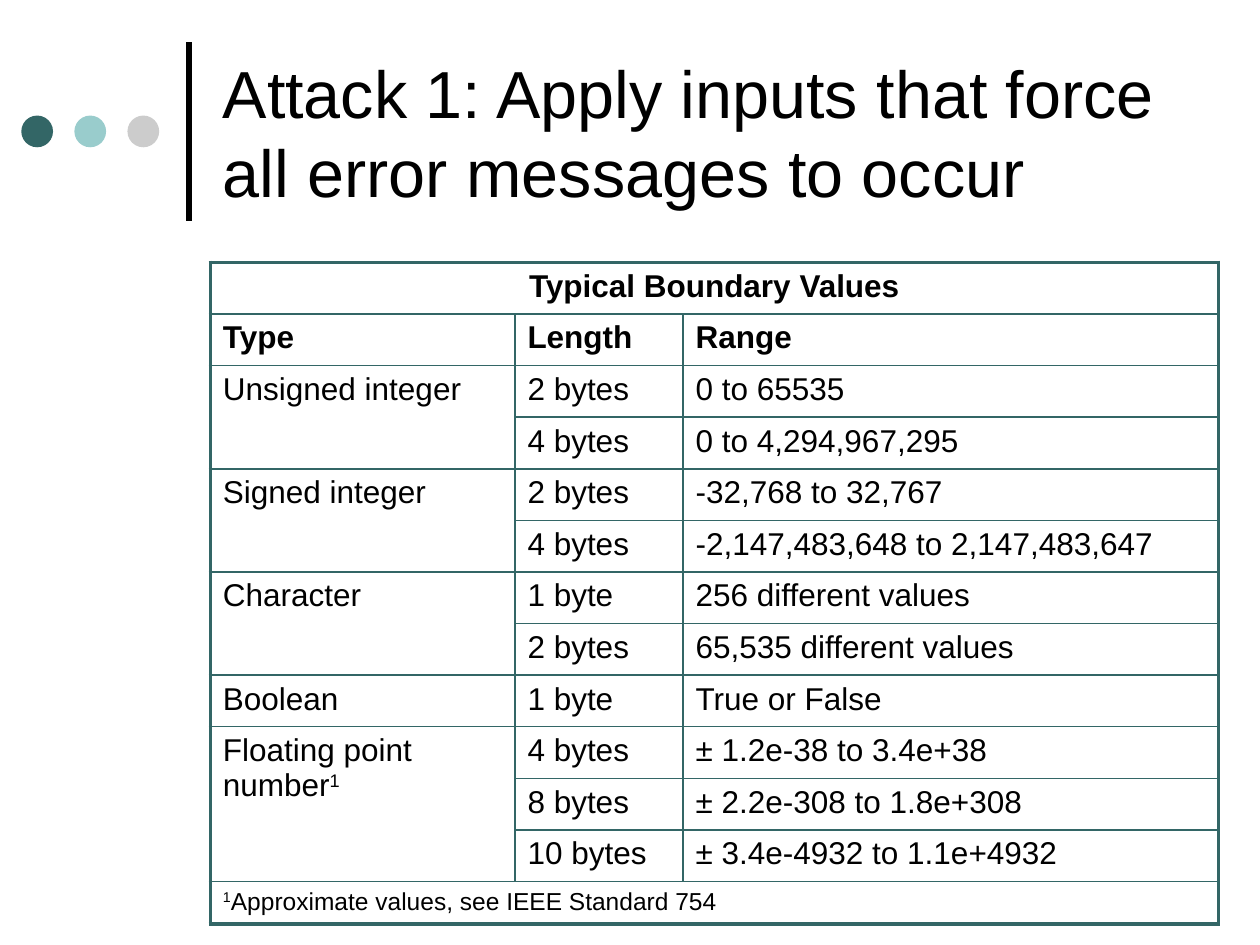
from lxml import etree
from pptx import Presentation
from pptx import util as u
from pptx.dml.color import RGBColor
from pptx.enum import shapes, text
from pptx.oxml.ns import qn

INK, TEAL, AQUA, GREY = "000000", "336666", "99CCCC", "CCCCCC"
ROWS = [
    ("Typical Boundary Values", "", ""),
    ("Type", "Length", "Range"),
    ("Unsigned integer", "2 bytes", "0 to 65535"),
    ("", "4 bytes", "0 to 4,294,967,295"),
    ("Signed integer", "2 bytes", "-32,768 to 32,767"),
    ("", "4 bytes", "-2,147,483,648 to 2,147,483,647"),
    ("Character", "1 byte", "256 different values"),
    ("", "2 bytes", "65,535 different values"),
    ("Boolean", "1 byte", "True or False"),
    ("Floating point number^1", "4 bytes", "± 1.2e-38 to 3.4e+38"),
    ("", "8 bytes", "± 2.2e-308 to 1.8e+308"),
    ("", "10 bytes", "± 3.4e-4932 to 1.1e+4932"),
    ("^1^Approximate values, see IEEE Standard 754", "", ""),
]
LAST = len(ROWS) - 1
SPANS = [(0, 0, 0, 2), (2, 0, 3, 0), (4, 0, 5, 0), (6, 0, 7, 0),
         (9, 0, 11, 0), (LAST, 0, LAST, 2)]
COLS = [6.14, 3.39, 10.79]
HIGH, FOOT = 1.04, 0.86


def tint(code):
    return RGBColor.from_string(code)


def put(item, form):
    for key, val in form.items():
        setattr(item, key, val)


def write(para, words, size, bold=False):
    for i, part in enumerate(words.split("^")):
        if not part:
            continue
        run = para.add_run()
        run.text = part
        put(run.font, {"name": "Arial", "size": u.Pt(size), "bold": bold})
        run.font.color.rgb = tint(INK)
        if i % 2:
            run._r.get_or_add_rPr().set("baseline", "30000")


def add_rule(slide, x, top, low):
    rule = slide.shapes.add_connector(
        shapes.MSO_CONNECTOR.STRAIGHT, u.Cm(x), u.Cm(low), u.Cm(x), u.Cm(top))
    rule.line.color.rgb = tint(INK)
    rule.line.width = u.Pt(3)
    etree.SubElement(rule._element.spPr, qn("a:effectLst"))


def add_dot(slide, x, y, size, code):
    dot = slide.shapes.add_shape(
        shapes.MSO_SHAPE.OVAL, u.Cm(x), u.Cm(y), u.Cm(size), u.Cm(size))
    dot.shadow.inherit = False
    dot.fill.solid()
    dot.fill.fore_color.rgb = tint(code)
    dot.line.fill.background()


def add_title(slide, words, x, y, wide, high):
    box = slide.shapes.add_textbox(u.Cm(x), u.Cm(y), u.Cm(wide), u.Cm(high))
    put(box.text_frame, {"word_wrap": True,
                         "vertical_anchor": text.MSO_ANCHOR.MIDDLE})
    write(box.text_frame.paragraphs[0], words, 38)


def add_edges(cell, row, col):
    outer = {"L": col == 0, "R": col + cell.span_width == len(COLS),
             "T": row == 0, "B": row + cell.span_height == len(ROWS)}
    props = cell._tc.get_or_add_tcPr()
    for i, (side, thick) in enumerate(outer.items()):
        edge = etree.Element(qn("a:ln" + side))
        edge.set("w", str(u.Pt(2.25 if thick else 1)))
        fill = etree.SubElement(edge, qn("a:solidFill"))
        etree.SubElement(fill, qn("a:srgbClr")).set("val", TEAL)
        props.insert(i, edge)


def fill_cell(cell, words, row, col):
    cell.fill.background()
    if cell.is_spanned:
        return
    para = cell.text_frame.paragraphs[0]
    gap = etree.SubElement(para._p.get_or_add_pPr(), qn("a:spcBef"))
    etree.SubElement(gap, qn("a:spcPct")).set("val", "20000")
    if row == 0:
        para.alignment = text.PP_ALIGN.CENTER
    write(para, words, 14 if row == LAST else 18, row < 2)
    add_edges(cell, row, col)


def add_grid(slide, x, y):
    frame = slide.shapes.add_table(
        len(ROWS), len(COLS), u.Cm(x), u.Cm(y),
        u.Cm(sum(COLS)), u.Cm(HIGH * LAST + FOOT))
    grid = frame.table
    put(grid, {"first_row": False, "horz_banding": False})
    for col, wide in zip(grid.columns, COLS):
        col.width = u.Cm(wide)
    for i, row in enumerate(grid.rows):
        row.height = u.Cm(FOOT if i == LAST else HIGH)
    for top, left, low, right in SPANS:
        grid.cell(top, left).merge(grid.cell(low, right))
    for r, row in enumerate(ROWS):
        for c, words in enumerate(row):
            fill_cell(grid.cell(r, c), words, r, c)


def main():
    deck = Presentation()
    put(deck, {"slide_width": u.Cm(25.4), "slide_height": u.Cm(19.05)})
    slide = deck.slides.add_slide(deck.slide_layouts[6])
    add_rule(slide, 3.81, 0.84, 4.45)
    for i, code in enumerate([TEAL, AQUA, GREY]):
        add_dot(slide, 0.43 + 1.07 * i, 2.33, 0.64, code)
    add_title(slide, "Attack 1: Apply inputs that force all error messages to occur",
              4.24, 0.53, 19.48, 4.24)
    add_grid(slide, 4.24, 5.29)
    deck.save("out.pptx")


if __name__ == "__main__":
    main()
